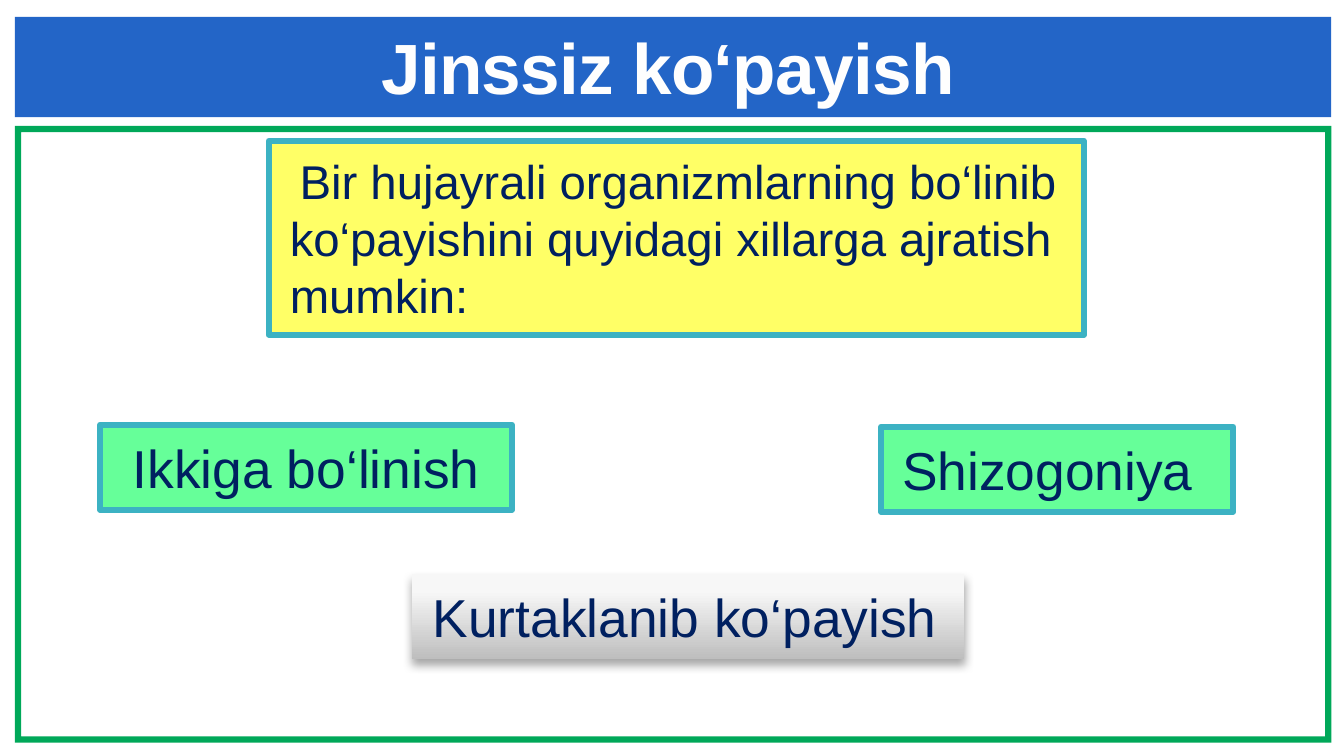
from lxml import etree
from pptx import Presentation, util as u
from pptx.dml.color import RGBColor
from pptx.enum import shapes, text
from pptx.oxml import ns

NAVY = RGBColor(0x00, 0x20, 0x60)
BLUE = RGBColor(0x23, 0x65, 0xC7)
TEAL = RGBColor(0x3C, 0xB2, 0xC3)
GREEN = RGBColor(0x00, 0xA8, 0x59)
MINT = RGBColor(0x66, 0xFF, 0x99)
YELLOW = RGBColor(0xFF, 0xFF, 0x66)
WHITE = RGBColor(0xFE, 0xFE, 0xFE)
GREY = RGBColor(0xBE, 0xBE, 0xBE)
PALE = RGBColor(0xF7, 0xF7, 0xF7)
KINDS = shapes.MSO_SHAPE


def write(shape, words, size=18, color=NAVY, bold=False, lead=None,
          align=text.PP_ALIGN.LEFT, space=0):
    frame = shape.text_frame
    frame.word_wrap = True
    frame.auto_size = text.MSO_AUTO_SIZE.NONE
    frame.vertical_anchor = text.MSO_ANCHOR.MIDDLE
    para = frame.paragraphs[0]
    para.alignment = align
    parts = [(" ", lead)] if lead else []
    for part, points in parts + [(words, size)]:
        run = para.add_run()
        run.text = part
        run.font.name = "Arial"
        run.font.size = u.Pt(points)
        run.font.bold = bold
        run.font.color.rgb = color
        run._r.get_or_add_rPr().set("spc", str(space))


def block(place, fill, line=None, kind=KINDS.RECTANGLE):
    shape = slide.shapes.add_shape(kind, *[u.Inches(n) for n in place])
    shape.shadow.inherit = False
    shape.fill.solid()
    shape.fill.fore_color.rgb = fill
    if line is None:
        shape.line.fill.background()
    else:
        shape.line.color.rgb = line
        shape.line.width = u.Pt(2)
    return shape


deck = Presentation()
deck.slide_width = u.Cm(16)
deck.slide_height = u.Cm(9)
slide = deck.slides.add_slide(deck.slide_layouts[5])

border = block((0.07, 0.59, 6.17, 2.89), GREEN, kind=KINDS.FRAME)
border.adjustments[0] = 0.01
banner = block((0.07, 0.08, 6.17, 0.47), BLUE)

title = slide.shapes.title
title.left, title.top = u.Inches(1.74), u.Inches(0.09)
title.width, title.height = u.Inches(2.78), u.Inches(0.42)
frame = title.text_frame
frame.margin_left = frame.margin_right = frame.margin_bottom = 0
frame.margin_top = u.Inches(0.02)
write(title, "Jinssiz ko‘payish", size=24, color=WHITE, bold=True,
      align=text.PP_ALIGN.CENTER, space=-25)
slide.shapes._spTree.append(title._element)

split = block((0.47, 1.99, 1.93, 0.4), MINT, TEAL)
write(split, "Ikkiga bo‘linish", lead=14)

intro = block((1.26, 0.66, 3.82, 0.91), YELLOW, TEAL)
write(intro, "Bir hujayrali organizmlarning bo‘linib ko‘payishini "
      "quyidagi xillarga ajratish mumkin:", size=16, lead=12)

many = block((4.13, 2, 1.65, 0.4), MINT, TEAL)
write(many, "Shizogoniya")

bud = block((1.93, 2.69, 2.59, 0.4), PALE)
write(bud, "Kurtaklanib ko‘payish")
bud.fill.gradient()
bud.fill.gradient_angle = 90
for stop, (spot, color) in zip(bud.fill.gradient_stops,
                               [(0, GREY), (0.8, PALE)]):
    stop.position = spot
    stop.color.rgb = color

glow = bud._element.spPr.find(ns.qn("a:effectLst"))
shade = etree.SubElement(glow, ns.qn("a:outerShdw"), blurRad=str(u.Pt(3.1)),
                         dist=str(u.Pt(1.8)), dir="5400000", rotWithShape="0")
black = etree.SubElement(shade, ns.qn("a:srgbClr"), val="000000")
etree.SubElement(black, ns.qn("a:alpha"), val="35000")

deck.save("out.pptx")
